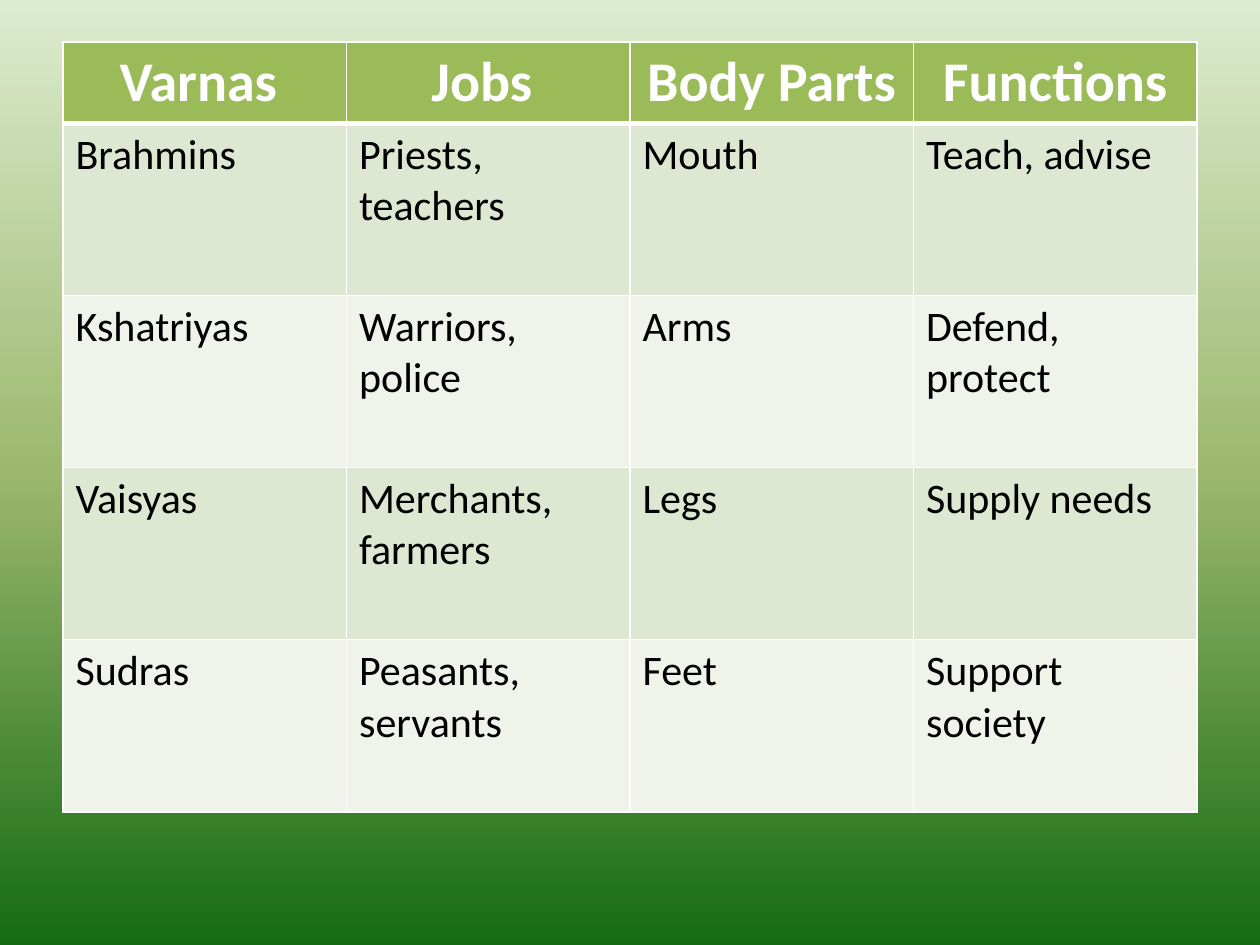
from copy import deepcopy

from lxml.etree import SubElement
from pptx import Presentation
from pptx.dml.color import RGBColor
from pptx.enum.text import PP_ALIGN
from pptx.oxml.ns import qn
from pptx.util import Cm, Pt

# Content
HEADINGS = ("Varnas ", "Jobs ", "Body Parts", "Functions")
VARNAS = [
    ("Brahmins", "Priests, teachers", "Mouth", "Teach, advise"),
    ("Kshatriyas", "Warriors, police", "Arms", "Defend, protect"),
    ("Vaisyas", "Merchants, farmers", "Legs", "Supply needs"),
    ("Sudras", "Peasants, servants", "Feet", "Support society"),
]

# Style
FONT = "Calibri"
WHITE = RGBColor(0xFF, 0xFF, 0xFF)
BLACK = RGBColor(0x00, 0x00, 0x00)
HEADER_GREEN = RGBColor(0x9B, 0xBB, 0x59)
BANDS = (RGBColor(0xDE, 0xE7, 0xD1), RGBColor(0xEF, 0xF3, 0xEA))
BACKDROP = [
    (0, RGBColor(0xDD, 0xEB, 0xCF)),
    (50, RGBColor(0x9C, 0xB8, 0x6E)),
    (100, RGBColor(0x15, 0x6B, 0x13)),
]

# Layout
LEFT, TOP = Cm(1.27), Cm(0.85)
COLUMN_WIDTH = Cm(5.715)
HEADER_HEIGHT, ROW_HEIGHT = Cm(1.63), Cm(3.47)


def paint_background(page):
    fill = page.background.fill
    fill.gradient()
    fill.gradient_angle = 270
    stop_list = page.element.find(".//" + qn("a:gsLst"))
    stop_list.insert(1, deepcopy(stop_list[0]))
    for element, stop, (percent, color) in zip(stop_list, fill.gradient_stops, BACKDROP):
        element.set("pos", str(percent * 1000))
        stop.color.rgb = color


def add_borders(cell, top, bottom):
    properties = cell._tc.get_or_add_tcPr()
    for side, width in (("L", 1), ("R", 1), ("T", top), ("B", bottom)):
        line = SubElement(properties, qn(f"a:ln{side}"), w=str(Pt(width)))
        solid = SubElement(line, qn("a:solidFill"))
        SubElement(solid, qn("a:srgbClr"), val=str(WHITE))


def fill_cell(cell, text, is_header, color):
    cell.fill.solid()
    cell.fill.fore_color.rgb = color
    para = cell.text_frame.paragraphs[0]
    para.alignment = PP_ALIGN.CENTER if is_header else PP_ALIGN.LEFT
    span = para.add_run()
    span.text = text
    span.font.name = FONT
    span.font.size = Pt(32 if is_header else 24)
    span.font.bold = is_header
    span.font.color.rgb = WHITE if is_header else BLACK


def add_varna_table(page):
    rows = [HEADINGS, *VARNAS]
    table = page.shapes.add_table(
        len(rows), len(HEADINGS), LEFT, TOP,
        COLUMN_WIDTH * len(HEADINGS), HEADER_HEIGHT + ROW_HEIGHT * len(VARNAS),
    ).table
    for column in table.columns:
        column.width = COLUMN_WIDTH
    for r, texts in enumerate(rows):
        is_header = r == 0
        table.rows[r].height = HEADER_HEIGHT if is_header else ROW_HEIGHT
        color = HEADER_GREEN if is_header else BANDS[(r - 1) % 2]
        for c, text in enumerate(texts):
            cell = table.cell(r, c)
            # A thick rule separates the header from the body
            add_borders(cell, top=3 if r == 1 else 1, bottom=3 if is_header else 1)
            fill_cell(cell, text, is_header, color)


def main():
    deck = Presentation()
    deck.slide_width, deck.slide_height = Cm(25.4), Cm(19.05)
    page = deck.slides.add_slide(deck.slide_layouts[6])
    paint_background(page)
    add_varna_table(page)
    deck.save("out.pptx")


if __name__ == "__main__":
    main()
